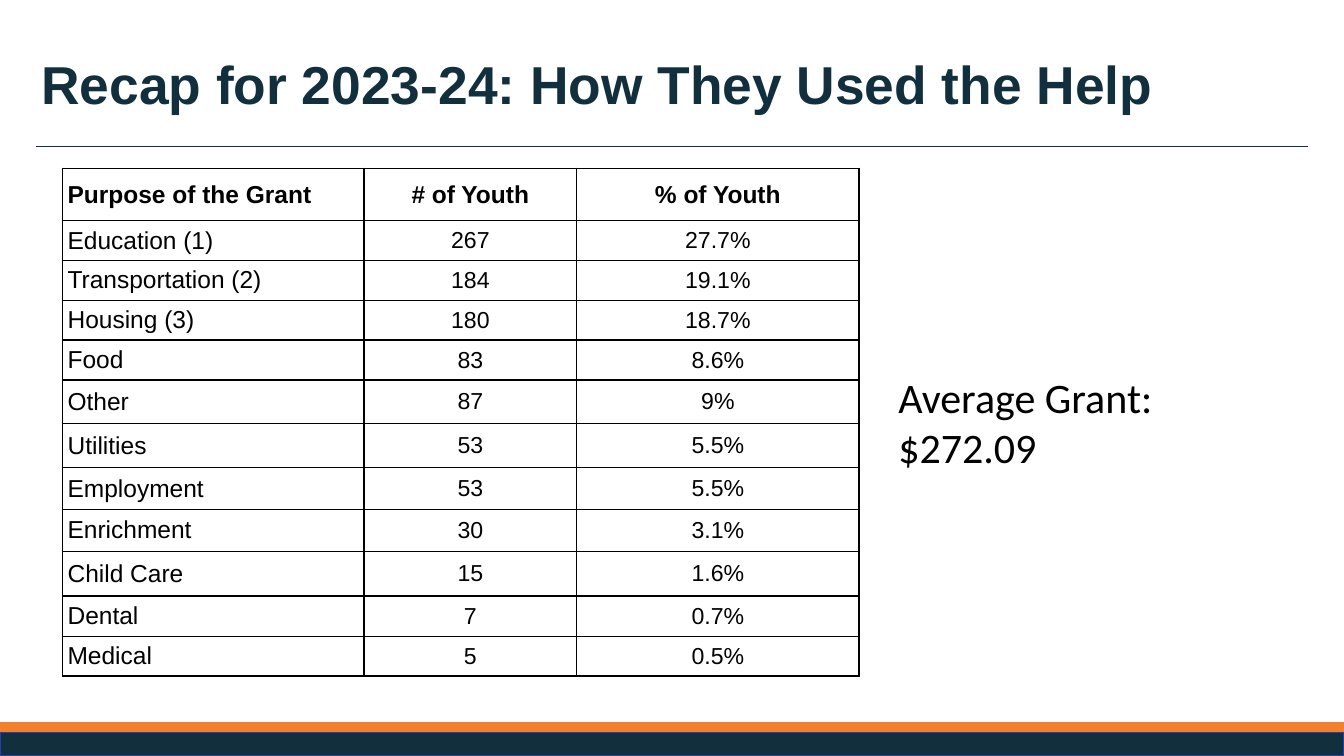
from lxml import etree
from pptx import Presentation
from pptx.dml.color import RGBColor
from pptx.enum import shapes, text
from pptx.oxml import parse_xml
from pptx.oxml.ns import nsdecls, qn
from pptx.util import Inches, Pt

WIDTH, HEIGHT = 26.66, 15
NAVY, ORANGE, BLUE, BLACK = "112F3D", "F2802E", "273EAC", "000000"

TITLE = "Recap for 2023-24: How They Used the Help"
AVERAGE = "Average Grant: $272.09"
HEADER = ("Purpose of the Grant", "# of Youth", "% of Youth")
GRANTS = [
    ("Education (1)", "267", "27.7%"),
    ("Transportation (2)", "184", "19.1%"),
    ("Housing (3)", "180", "18.7%"),
    ("Food", "83", "8.6%"),
    ("Other", "87", "9%"),
    ("Utilities", "53", "5.5%"),
    ("Employment", "53", "5.5%"),
    ("Enrichment", "30", "3.1%"),
    ("Child Care", "15", "1.6%"),
    ("Dental", "7", "0.7%"),
    ("Medical", "5", "0.5%"),
]
COLUMN_WIDTHS = (5.98, 4.22, 5.6)
ROW_HEIGHTS = (1.04, 0.79, 0.79, 0.79, 0.79, 0.87, 0.87, 0.83, 0.83, 0.89, 0.8, 0.74)

MARGIN = 0.72
RULE_Y = 2.91
TABLE_LEFT, TABLE_TOP = 1.24, 3.34
NAVY_BAR, ORANGE_BAR = 0.47, 0.2


def color(value):
    return RGBColor.from_string(value)


def write(frame, content, size, font="Arial", fill=BLACK, bold=False,
          align=text.PP_ALIGN.LEFT, spacing=None):
    paragraph = frame.paragraphs[0]
    paragraph.alignment = align
    if spacing:
        paragraph.line_spacing = spacing
    run = paragraph.add_run()
    run.text = content
    run.font.name, run.font.size, run.font.bold = font, Pt(size), bold
    run.font.color.rgb = color(fill)


def add_text(slide, content, left, top, width, height, inset=0.1,
             anchor=text.MSO_ANCHOR.TOP, **style):
    box = slide.shapes.add_textbox(*map(Inches, (left, top, width, height)))
    frame = box.text_frame
    frame.word_wrap = True
    frame.vertical_anchor = anchor
    frame.margin_left = frame.margin_right = Inches(0.1)
    frame.margin_top = frame.margin_bottom = Inches(inset)
    write(frame, content, **style)


def add_bar(slide, top, height, fill, outline=None):
    bar = slide.shapes.add_shape(shapes.MSO_SHAPE.RECTANGLE, 0, Inches(top),
                                 Inches(WIDTH), Inches(height))
    bar.shadow.inherit = False
    bar.fill.solid()
    bar.fill.fore_color.rgb = color(fill)
    if outline:
        bar.line.color.rgb = color(outline)
        bar.line.width = Pt(2)
    else:
        bar.line.fill.background()


def add_rule(slide):
    rule = slide.shapes.add_connector(
        shapes.MSO_CONNECTOR.STRAIGHT, Inches(MARGIN), Inches(RULE_Y),
        Inches(WIDTH - MARGIN), Inches(RULE_Y))
    rule.line.color.rgb = color(NAVY)
    rule.line.width = Pt(0.75)
    etree.SubElement(rule._element.spPr, qn("a:effectLst"))


def set_borders(cell, line_color, points):
    properties = cell._tc.get_or_add_tcPr()
    for position, side in enumerate(("lnL", "lnR", "lnT", "lnB")):
        properties.insert(position, parse_xml(
            f'<a:{side} {nsdecls("a")} w="{Pt(points)}"><a:solidFill>'
            f'<a:srgbClr val="{line_color}"/></a:solidFill></a:{side}>'))


def add_grants_table(slide):
    rows = [HEADER] + GRANTS
    table = slide.shapes.add_table(
        len(rows), len(HEADER), Inches(TABLE_LEFT), Inches(TABLE_TOP),
        Inches(sum(COLUMN_WIDTHS)), Inches(sum(ROW_HEIGHTS))).table
    table.first_row = table.horz_banding = False
    for column, width in zip(table.columns, COLUMN_WIDTHS):
        column.width = Inches(width)
    for row_index, (values, height) in enumerate(zip(rows, ROW_HEIGHTS)):
        table.rows[row_index].height = Inches(height)
        is_header = row_index == 0
        for column_index, value in enumerate(values):
            is_label = column_index == 0
            cell = table.cell(row_index, column_index)
            cell.fill.background()
            cell.vertical_anchor = text.MSO_ANCHOR.MIDDLE
            cell.margin_left = cell.margin_right = Inches(0.1)
            cell.margin_top = cell.margin_bottom = Inches(0.1)
            set_borders(cell, BLACK, 2.25)
            write(cell.text_frame, value, size=35 if is_header or is_label else 33,
                  bold=is_header,
                  align=text.PP_ALIGN.LEFT if is_label else text.PP_ALIGN.CENTER)


def main():
    presentation = Presentation()
    presentation.slide_width, presentation.slide_height = Inches(WIDTH), Inches(HEIGHT)
    slide = presentation.slides.add_slide(presentation.slide_layouts[6])
    add_bar(slide, HEIGHT - NAVY_BAR - ORANGE_BAR, ORANGE_BAR, ORANGE)
    add_bar(slide, HEIGHT - NAVY_BAR, NAVY_BAR, NAVY, outline=BLUE)
    add_rule(slide)
    add_text(slide, TITLE, MARGIN, 0.7, WIDTH - 2 * MARGIN, 2.05, inset=0.05,
             anchor=text.MSO_ANCHOR.MIDDLE, size=76.2, fill=NAVY, bold=True, spacing=0.9)
    add_grants_table(slide)
    add_text(slide, AVERAGE, 17.72, 7.27, 8, 2.22, size=60, font="Calibri")
    presentation.save("out.pptx")


if __name__ == "__main__":
    main()
